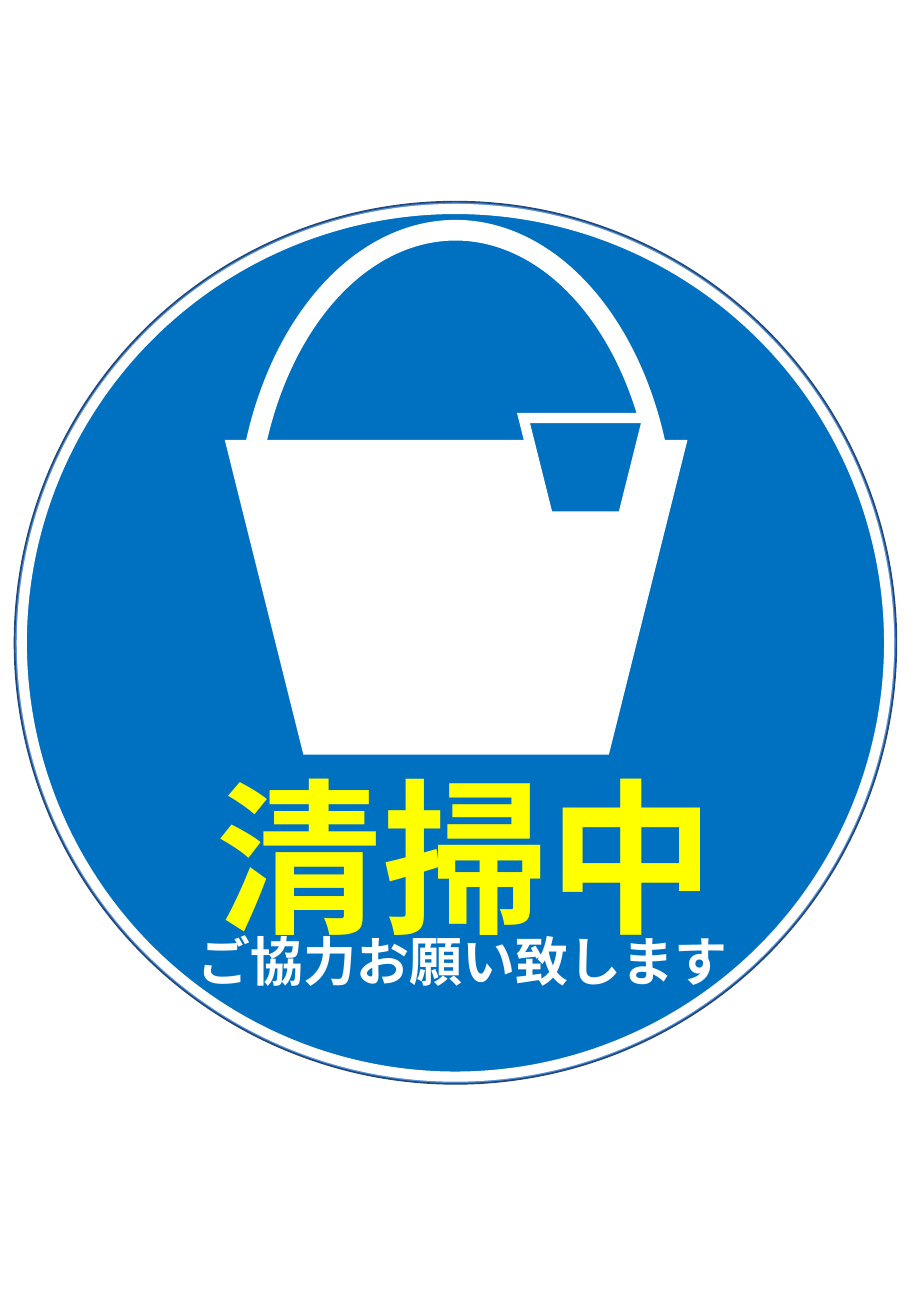
from lxml import etree
from pptx import Presentation
from pptx.dml.color import RGBColor
from pptx.enum.shapes import MSO_SHAPE
from pptx.enum.text import MSO_AUTO_SIZE
from pptx.oxml.ns import qn
from pptx.util import Inches, Pt

ELLIPSE = MSO_SHAPE.OVAL
BLOCK_ARC = MSO_SHAPE.BLOCK_ARC
TRAPEZOID = MSO_SHAPE.TRAPEZOID
GROW = MSO_AUTO_SIZE.SHAPE_TO_FIT_TEXT

BLUE, WHITE, YELLOW = "0070C0", "FFFFFF", "FFFF00"


def set_color(fill, color):
    fill.solid()
    fill.fore_color.rgb = RGBColor.from_string(color)


def add_part(shapes, kind, box, color, line_color=None, line_width=0):
    """Add a filled shape; without a line colour it has no outline."""
    part = shapes.add_shape(kind, *map(Inches, box))
    part.shadow.inherit = False
    set_color(part.fill, color)
    if line_color:
        set_color(part.line.fill, line_color)
        part.line.width = Pt(line_width)
    else:
        part.line.fill.background()
    return part


prs = Presentation()
prs.slide_width, prs.slide_height = Inches(7.5), Inches(10.83)
slide = prs.slides.add_slide(prs.slide_layouts[6])

# Round sign
sign = slide.shapes.add_group_shape().shapes
add_part(sign, ELLIPSE, (0.12, 1.66, 7.26, 7.26), "558ED5", "1F497D", 1)
add_part(sign, ELLIPSE, (0.18, 1.72, 7.14, 7.14), BLUE, WHITE, 6)

# Bucket with a cloth over its rim
bucket = slide.shapes.add_group_shape().shapes
handle_width, handle_thickness = 3.62, 0.17
handle = add_part(bucket, BLOCK_ARC, (1.94, 1.81, handle_width, 5.21), WHITE)
handle.adjustments[0] = 115.42
handle.adjustments[1] = 207.76
handle.adjustments[2] = handle_thickness / handle_width

pail = add_part(bucket, TRAPEZOID, (1.85, 3.62, 3.81, 2.59), WHITE)
cloth = add_part(bucket, TRAPEZOID, (4.31, 3.44, 1.02, 0.81), BLUE, WHITE, 6)
for tapered in (pail, cloth):
    tapered.rotation = 180
    tapered.adjustments[0] = 0.25
cloth_outline = cloth.line.fill._xPr
etree.SubElement(cloth_outline, qn("a:miter"), lim="800000")

# Wording
captions = [
    ("清掃中", (1.68, 6.16, 4.31, 1.76), 98.6, YELLOW),
    ("ご協力お願い致します", (1.53, 7.59, 4.62, 0.63), 31.4, WHITE),
]
for wording, box, size, color in captions:
    frame = slide.shapes.add_textbox(*map(Inches, box)).text_frame
    frame.text = wording
    frame.word_wrap = False
    frame.auto_size = GROW
    font = frame.paragraphs[0].runs[0].font
    font.name = "Calibri"
    font.size = Pt(size)
    font.bold = True
    set_color(font.fill, color)

prs.save("out.pptx")
